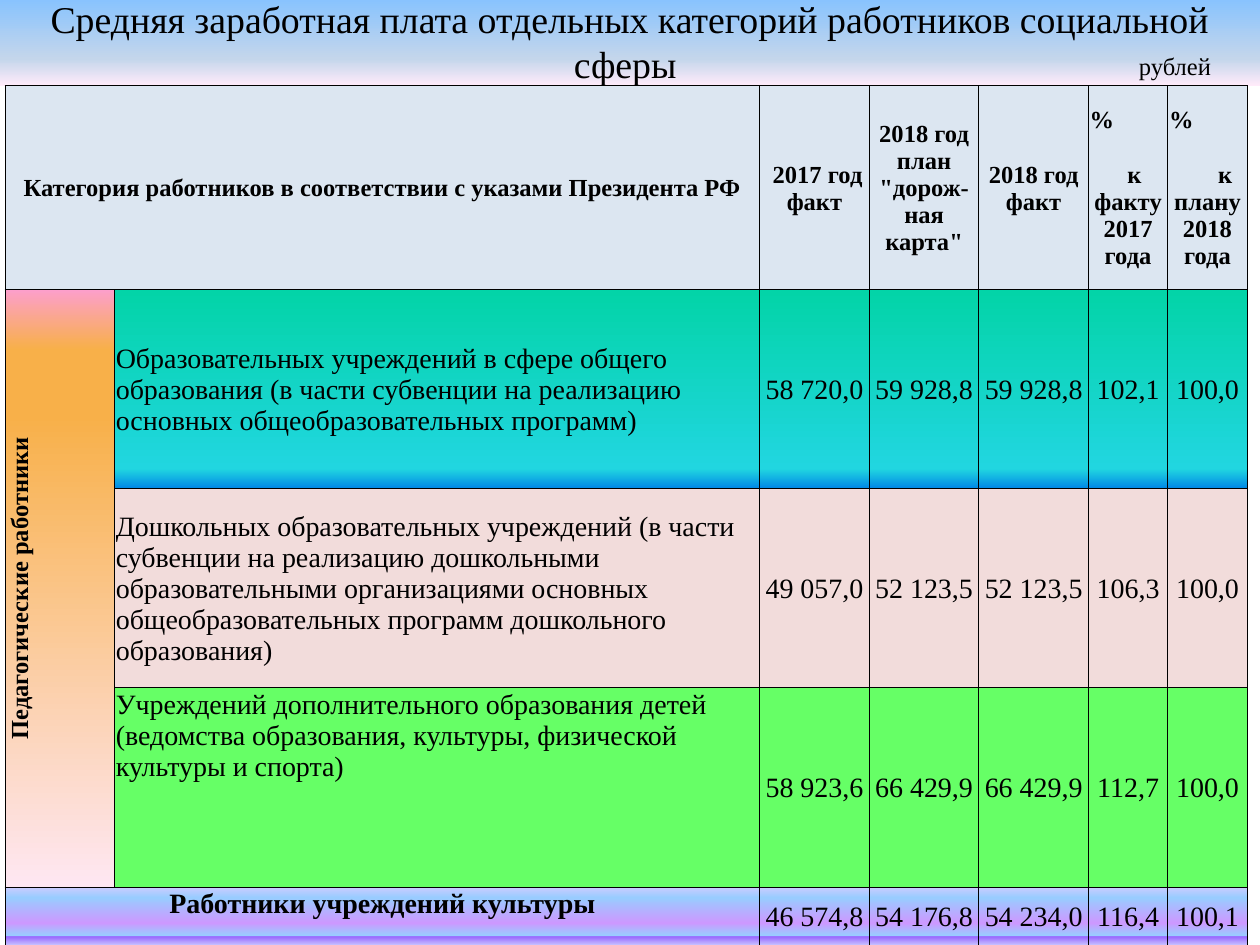
import pptx
import pptx.dml.color
import pptx.enum.shapes
import pptx.enum.text
import pptx.oxml
import pptx.oxml.ns
import pptx.util
from dataclasses import dataclass
from pptx.util import Inches

ALIGN = pptx.enum.text.PP_ALIGN
ANCHOR = pptx.enum.text.MSO_ANCHOR


@dataclass(frozen=True)
class Theme:
    """Colours, font and type sizes of the slide."""
    font: str = "Times New Roman"
    ink: str = "000000"
    title_size: float = 21.6
    header_size: float = 14
    body_size: float = 16
    border_width: float = 0.5
    header: str = "DCE6F1"
    preschool: str = "F2DCDB"
    extra: str = "66FF66"
    title: tuple = ((0, "85C2FF"), (70, "C4D6EB"), (100, "FFEBFA"))
    teachers: tuple = ((0, "FC9FCB"), (10, "F8B049"), (21, "F8B049"), (100, "FEE7F2"))
    school: tuple = ((0, "03D4A8"), (90, "21D6E0"), (100, "0087E6"))
    culture: tuple = ((0, "CCCCFF"), (18, "99CCFF"), (61, "CC99FF"),
                      (82, "99CCFF"), (84, "9966FF"), (100, "CCCCFF"))


THEME = Theme()
COLUMNS = (0.87, 5.12, 0.87, 0.87, 0.87, 0.63, 0.63)
ROWS = (1.62, 1.58, 1.58, 1.58, 0.47)
YEARS = (" 2017 год факт", "2018 год план \"дорож-ная карта\"", "2018 год факт")
RATIOS = (("к факту 2017 года", 0.1), ("к плану 2018 года", 0.28))
CATEGORIES = (
    ("Образовательных учреждений в сфере общего образования (в части субвенции "
     "на реализацию основных общеобразовательных программ)", THEME.school, ANCHOR.MIDDLE,
     ("58 720,0", "59 928,8", "59 928,8", "102,1", "100,0")),
    ("Дошкольных образовательных учреждений (в части субвенции на реализацию "
     "дошкольными образовательными организациями основных общеобразовательных "
     "программ дошкольного образования)", THEME.preschool, ANCHOR.MIDDLE,
     ("49 057,0", "52 123,5", "52 123,5", "106,3", "100,0")),
    ("Учреждений дополнительного образования детей (ведомства образования, "
     "культуры, физической культуры и спорта)", THEME.extra, ANCHOR.TOP,
     ("58 923,6", "66 429,9", "66 429,9", "112,7", "100,0")),
)
CULTURE = ("46 574,8", "54 176,8", "54 234,0", "116,4", "100,1")


def write(para, text, size=THEME.body_size, bold=False, align=ALIGN.CENTER):
    """Put one formatted span of text into a paragraph."""
    para.alignment = align
    span = para.add_run()
    span.text = text
    span.font.name = THEME.font
    span.font.size = pptx.util.Pt(size)
    span.font.bold = bold
    span.font.color.rgb = pptx.dml.color.RGBColor.from_string(THEME.ink)


def paint(fill, holder, colour):
    """Fill with a plain colour or with vertical gradient stops."""
    if isinstance(colour, str):
        fill.solid()
        fill.fore_color.rgb = pptx.dml.color.RGBColor.from_string(colour)
        return
    fill.gradient()
    fill.gradient_angle = 270
    stops = next(holder.iter(pptx.oxml.ns.qn("a:gsLst")))
    for stop in list(stops):
        stops.remove(stop)
    for position, value in colour:
        stops.append(pptx.oxml.parse_xml(
            f'<a:gs {pptx.oxml.ns.nsdecls("a")} pos="{position * 1000}">'
            f'<a:srgbClr val="{value}"/></a:gs>'))


def add_borders(cell):
    """Draw thin lines on all four sides of a cell."""
    properties = cell._tc.get_or_add_tcPr()
    for side in "LRTB":
        properties.append(pptx.oxml.parse_xml(
            f'<a:ln{side} {pptx.oxml.ns.nsdecls("a")} w="{pptx.util.Pt(THEME.border_width)}">'
            f'<a:solidFill><a:srgbClr val="{THEME.ink}"/></a:solidFill></a:ln{side}>'))


def fill_cell(cell, text, colour, anchor=ANCHOR.MIDDLE, **style):
    """Give a cell its fill, anchor and text."""
    paint(cell.fill, cell._tc, colour)
    cell.vertical_anchor = anchor
    write(cell.text_frame.paragraphs[0], text, **style)


def add_title(page):
    """Add the gradient title band."""
    band = page.shapes.add_shape(pptx.enum.shapes.MSO_SHAPE.RECTANGLE,
                                 Inches(0), Inches(-0.03), Inches(10), Inches(0.71))
    band.shadow.inherit = False
    band.line.fill.background()
    paint(band.fill, band._element, THEME.title)
    frame = band.text_frame
    frame.word_wrap = True
    frame.margin_top = frame.margin_bottom = 0
    frame.vertical_anchor = ANCHOR.MIDDLE
    write(frame.paragraphs[0],
          "Средняя заработная плата отдельных категорий работников социальной сферы ",
          size=THEME.title_size)


def add_unit(page):
    """Add the label with the unit of measure."""
    box = page.shapes.add_textbox(Inches(8.94), Inches(0.36), Inches(0.79), Inches(0.34))
    box.text_frame.word_wrap = False
    write(box.text_frame.paragraphs[0], "рублей", size=THEME.header_size, align=ALIGN.LEFT)


def add_grid(page):
    """Add the empty bordered table with its merged cells."""
    table = page.shapes.add_table(len(ROWS), len(COLUMNS), Inches(0.04), Inches(0.68),
                                  Inches(sum(COLUMNS)), Inches(sum(ROWS))).table
    table.first_row = table.horz_banding = False
    for column, width in zip(table.columns, COLUMNS):
        column.width = Inches(width)
    for row, height in zip(table.rows, ROWS):
        row.height = Inches(height)
    for cell in table.iter_cells():
        cell.margin_left = cell.margin_right = cell.margin_top = Inches(0.01)
        cell.margin_bottom = 0
        add_borders(cell)
    for first, last in (((0, 0), (0, 1)), ((1, 0), (3, 0)), ((4, 0), (4, 1))):
        table.cell(*first).merge(table.cell(*last))
    return table


def fill_header(table):
    """Write the header row."""
    style = dict(size=THEME.header_size, bold=True)
    fill_cell(table.cell(0, 0), "Категория работников в соответствии с указами Президента РФ",
              THEME.header, **style)
    for column, text in enumerate(YEARS, 2):
        fill_cell(table.cell(0, column), text, THEME.header, **style)
    for column, (text, indent) in enumerate(RATIOS, 5):
        cell = table.cell(0, column)
        fill_cell(cell, "%", THEME.header, align=ALIGN.LEFT, **style)
        para = cell.text_frame.add_paragraph()
        para.space_before = pptx.util.Pt(16)
        write(para, text, **style)
        para._p.get_or_add_pPr().set("indent", str(Inches(indent)))


def fill_values(table, row, values, colour):
    """Write the figures of one row."""
    for column, value in enumerate(values, 2):
        fill_cell(table.cell(row, column), value, colour)


def fill_body(table):
    """Write the category rows below the header."""
    group = table.cell(1, 0)
    fill_cell(group, "Педагогические работники", THEME.teachers,
              size=THEME.header_size, bold=True)
    group._tc.get_or_add_tcPr().set("vert", "vert270")
    for row, (label, colour, anchor, values) in enumerate(CATEGORIES, 1):
        fill_cell(table.cell(row, 1), label, colour, anchor=anchor, align=ALIGN.LEFT)
        fill_values(table, row, values, colour)
    fill_cell(table.cell(4, 0), "Работники учреждений культуры", THEME.culture,
              anchor=ANCHOR.TOP, bold=True)
    fill_values(table, 4, CULTURE, THEME.culture)


def main():
    """Build the slide and save it."""
    deck = pptx.Presentation()
    deck.slide_width, deck.slide_height = Inches(10), Inches(7.5)
    page = deck.slides.add_slide(deck.slide_layouts[6])
    add_title(page)
    table = add_grid(page)
    fill_header(table)
    fill_body(table)
    add_unit(page)
    deck.save("out.pptx")


if __name__ == "__main__":
    main()
